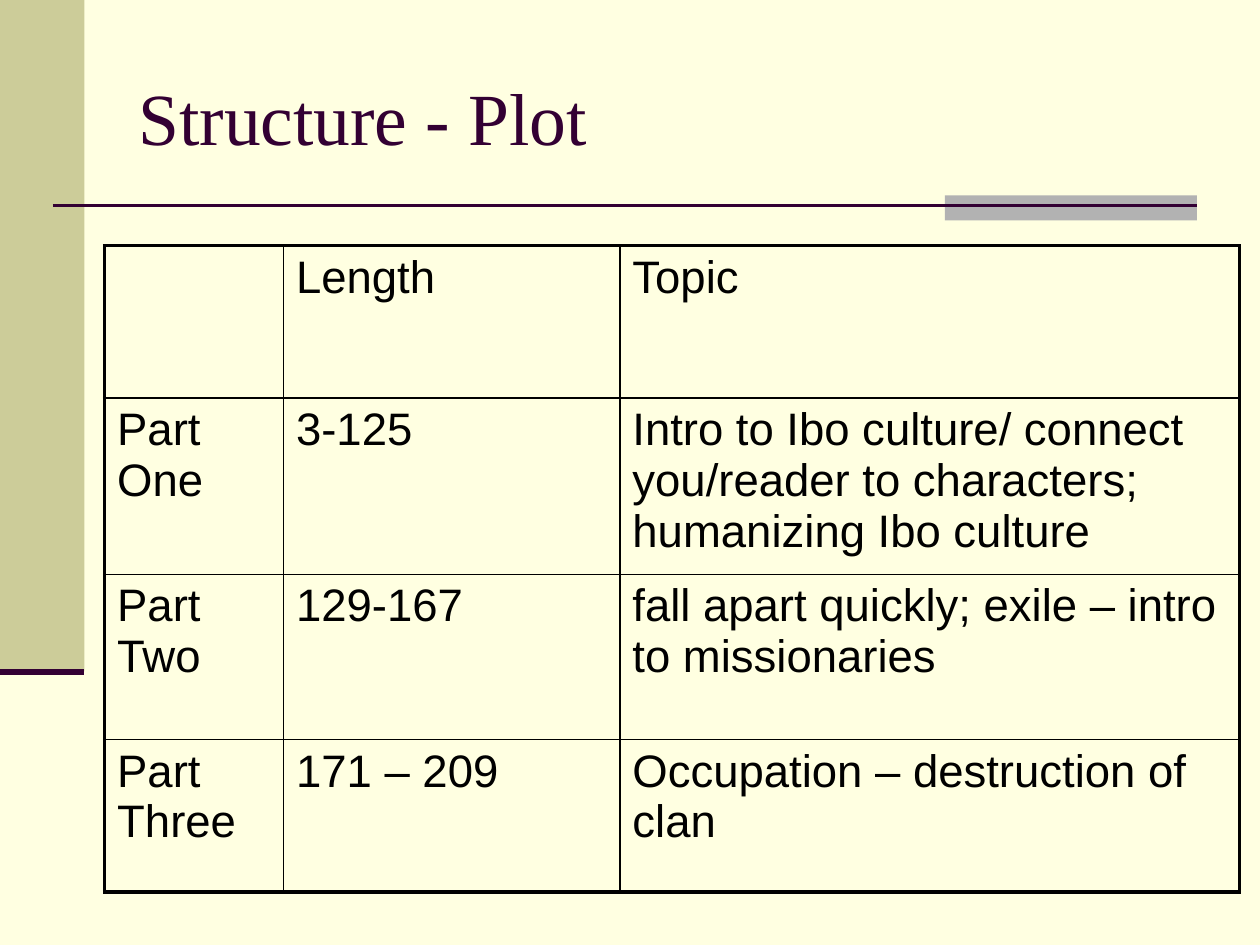
from lxml import etree
from pptx import Presentation
from pptx.dml.color import RGBColor
from pptx.enum import shapes, text
from pptx.oxml import ns
from pptx.util import Inches, Pt

CREAM = RGBColor(0xFF, 0xFF, 0xE1)
KHAKI = RGBColor(0xCC, 0xCC, 0x99)
GRAY = RGBColor(0xB2, 0xB2, 0xB2)
PLUM = RGBColor(0x33, 0x00, 0x33)
BLACK = RGBColor(0, 0, 0)

PLOT = [
    ("", "Length", "Topic"),
    ("Part One", "3-125",
     "Intro to Ibo culture/ connect you/reader to characters; humanizing Ibo culture"),
    ("Part Two", "129-167", "fall apart quickly; exile – intro to missionaries"),
    ("Part Three", "171 – 209", "Occupation – destruction of clan"),
]
COLUMN_WIDTHS = (1.42, 2.67, 4.92)
ROW_HEIGHTS = (1.21, 1.31, 1.31, 1.21)


def add_block(slide, left, top, width, height, color):
    """Add a plain filled rectangle."""
    block = slide.shapes.add_shape(
        shapes.MSO_SHAPE.RECTANGLE, left, top, width, height)
    block.shadow.inherit = False
    block.fill.solid()
    block.fill.fore_color.rgb = color
    block.line.fill.background()


def add_rule(slide, left, top, width, weight):
    """Add a horizontal plum line without a shadow."""
    rule = slide.shapes.add_connector(
        shapes.MSO_CONNECTOR.STRAIGHT, left, top, left + width, top)
    rule.line.color.rgb = PLUM
    rule.line.width = Pt(weight)
    etree.SubElement(rule._element.spPr, ns.qn("a:effectLst"))


def style_run(paragraph, font_name, size, color):
    """Format every run of a paragraph."""
    for run in paragraph.runs:
        run.font.name = font_name
        run.font.size = Pt(size)
        run.font.color.rgb = color


def add_decoration(slide, left, top, width):
    """Draw the side band and the accented rule under the title."""
    band_width, band_height = Inches(0.67), Inches(5.33)
    rule_left, rule_top = left + Inches(0.42), top + Inches(1.63)
    rule_right = left + width - Inches(0.5)
    accent_width = Inches(2)
    add_block(slide, left, top, band_width, band_height, KHAKI)
    add_block(slide, rule_right - accent_width, top + Inches(1.55),
              accent_width, Inches(0.2), GRAY)
    add_rule(slide, rule_left, rule_top, rule_right - rule_left, 1.5)
    add_rule(slide, left, top + band_height, band_width, 3.5)


def add_title(slide, left, top, width, height):
    """Add the slide title, centred vertically in its box."""
    frame = slide.shapes.add_textbox(left, top, width, height).text_frame
    frame.word_wrap = True
    frame.vertical_anchor = text.MSO_ANCHOR.MIDDLE
    frame.text = "Structure - Plot"
    style_run(frame.paragraphs[0], "Times New Roman", 42, PLUM)


def set_borders(cell, weights):
    """Set black borders from a mapping of side to weight in points."""
    properties = cell._tc.get_or_add_tcPr()
    for position, (side, weight) in enumerate(weights.items()):
        border = etree.Element(ns.qn(f"a:ln{side}"), w=str(Pt(weight)))
        fill = etree.SubElement(border, ns.qn("a:solidFill"))
        etree.SubElement(fill, ns.qn("a:srgbClr"), val=str(BLACK))
        properties.insert(position, border)


def add_plot_table(slide, left, top):
    """Add the table of parts, with a heavy outline and thin inner lines."""
    last_row, last_column = len(PLOT) - 1, len(COLUMN_WIDTHS) - 1
    table = slide.shapes.add_table(
        len(PLOT), len(COLUMN_WIDTHS), left, top,
        Inches(sum(COLUMN_WIDTHS)), Inches(sum(ROW_HEIGHTS))).table
    table.first_row = table.horz_banding = False
    for column, width in zip(table.columns, COLUMN_WIDTHS):
        column.width = Inches(width)
    for r, (part, height) in enumerate(zip(PLOT, ROW_HEIGHTS)):
        table.rows[r].height = Inches(height)
        for c, wording in enumerate(part):
            cell = table.cell(r, c)
            cell.fill.background()
            cell.text = wording
            paragraph = cell.text_frame.paragraphs[0]
            paragraph.space_before = Pt(5.2)
            style_run(paragraph, "Arial", 26, BLACK)
            outer = {"L": c == 0, "R": c == last_column,
                     "T": r == 0, "B": r == last_row}
            set_borders(cell, {side: 2.25 if edge else 1
                               for side, edge in outer.items()})


def main():
    """Build and save the slide."""
    deck = Presentation()
    deck.slide_width, deck.slide_height = Inches(10), Inches(7.5)
    slide = deck.slides.add_slide(deck.slide_layouts[6])
    slide.background.fill.solid()
    slide.background.fill.fore_color.rgb = CREAM
    add_decoration(slide, 0, 0, deck.slide_width)
    add_title(slide, Inches(1), Inches(0.3), Inches(8.5), Inches(1.25))
    add_plot_table(slide, Inches(0.83), Inches(1.95))
    deck.save("out.pptx")


if __name__ == "__main__":
    main()
